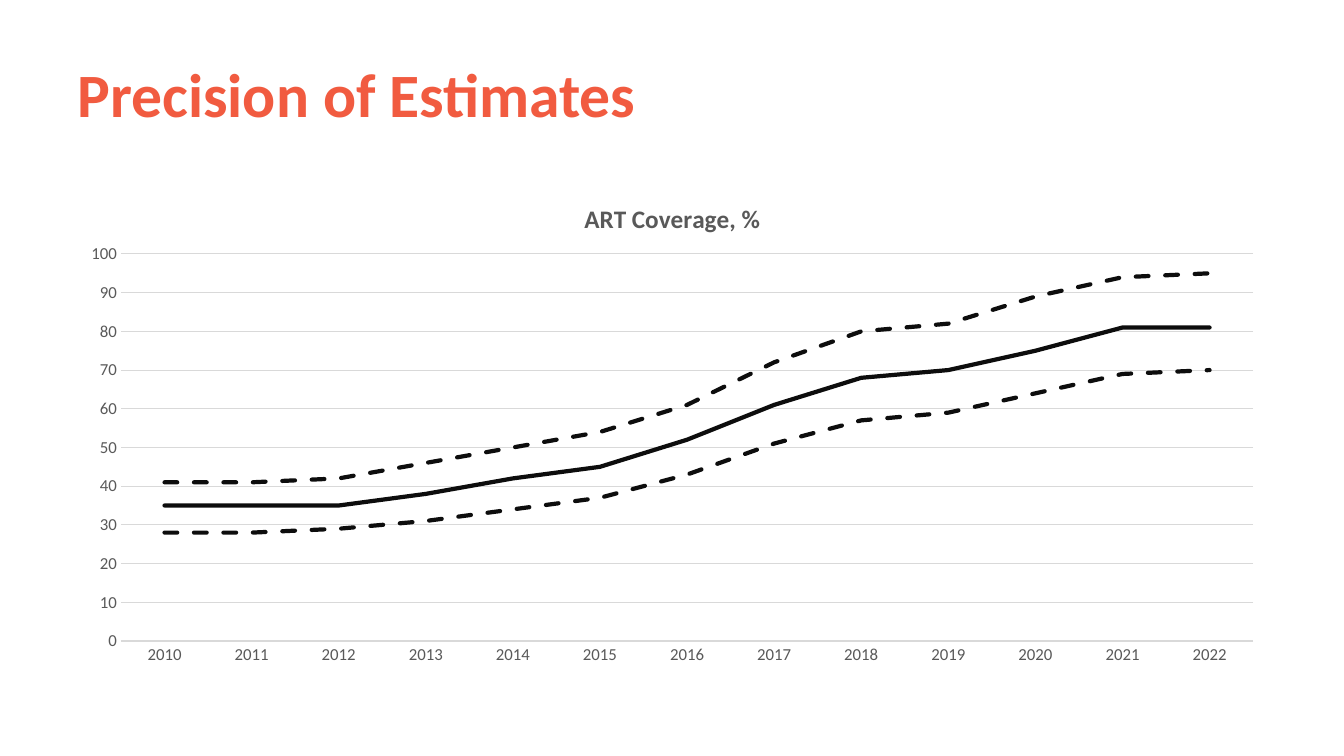
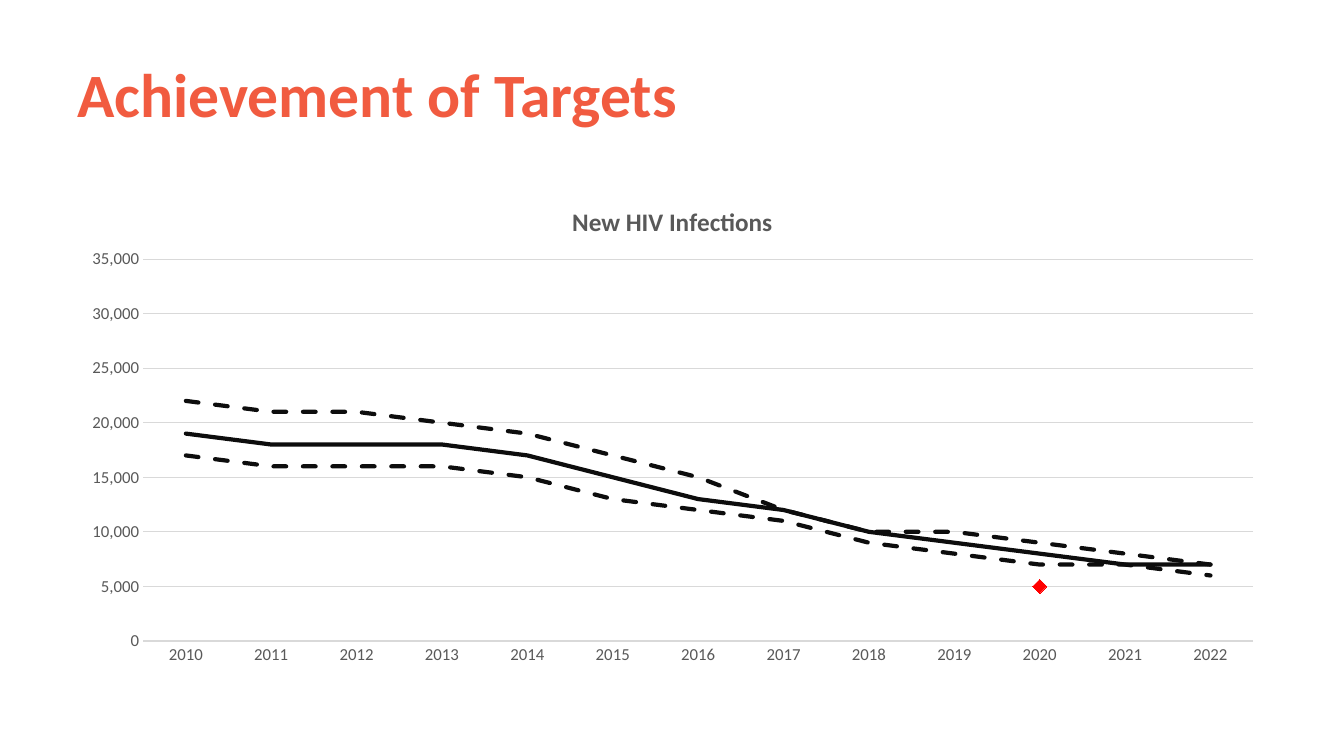
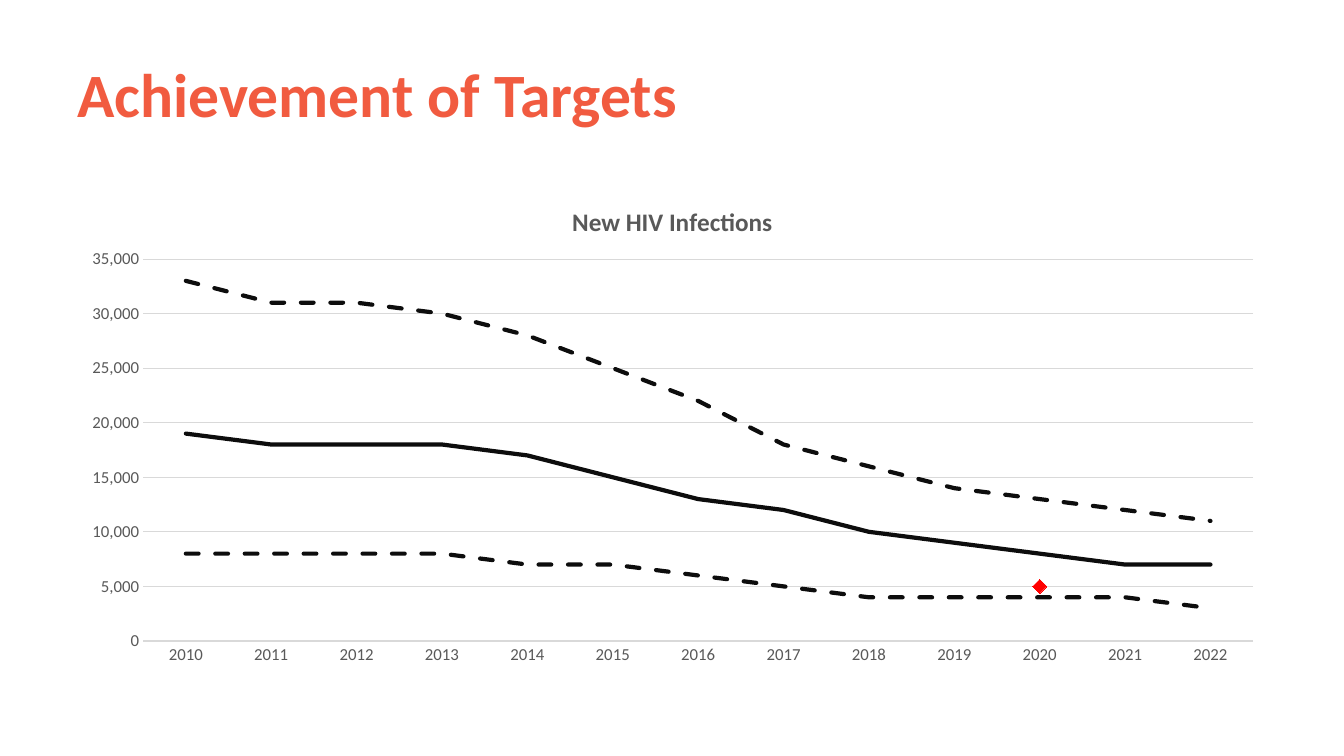
from dataclasses import dataclass

import pptx
import pptx.chart.data
import pptx.dml.color
import pptx.enum.chart
import pptx.enum.dml
import pptx.enum.text
import pptx.oxml
import pptx.oxml.ns
import pptx.util
from pptx.util import Inches


@dataclass
class Theme:
    font: str = "Calibri"
    title_color: str = "F15B40"
    label_color: str = "595959"
    grid_color: str = "D9D9D9"
    line_color: str = "0D0D0D"
    target_color: str = "FF0000"
    text_color: str = "000000"
    title_size: int = 44
    chart_title_size: int = 18
    label_size: int = 12
    chart_size: int = 10
    line_width: float = 3
    grid_width: float = 0.75
    marker_size: int = 10


theme = Theme()

# Shared frame of the chart and right and bottom edges of its plot, in inches
LEFT, TOP, WIDTH, HEIGHT = 0.67, 1.75, 12, 4.95
PLOT_RIGHT, PLOT_BOTTOM = 12.43, 6.36


def style_font(font, size, color, bold=False):
    font.name = theme.font
    font.size = pptx.util.Pt(size)
    font.bold = bold
    font.color.rgb = pptx.dml.color.RGBColor.from_string(color)


def place(parent, index, left, top, right=None, bottom=None):
    """Fix a chart part at slide coordinates given in inches."""
    for old in parent.xpath("c:layout"):
        parent.remove(old)
    settings = [("xMode", "edge"), ("yMode", "edge"),
                ("x", (left - LEFT) / WIDTH), ("y", (top - TOP) / HEIGHT)]
    if right is not None:
        settings.insert(0, ("layoutTarget", "inner"))
        settings += [("w", (right - left) / WIDTH), ("h", (bottom - top) / HEIGHT)]
    tags = "".join(f'<c:{name} val="{value}"/>' for name, value in settings)
    namespace = pptx.oxml.ns.nsdecls("c")
    parent.insert(index, pptx.oxml.parse_xml(
        f"<c:layout {namespace}><c:manualLayout>{tags}</c:manualLayout></c:layout>"))


# Content
years = [str(year) for year in range(2010, 2023)]
infections = [19000, 18000, 18000, 18000, 17000, 15000, 13000,
              12000, 10000, 9000, 8000, 7000, 7000]
target = [5000 if year == "2020" else None for year in years]
infection_chart = dict(title="Achievement of Targets", chart_title="New HIV Infections",
                       title_at=(5.63, 1.98), plot_at=(1.42, 2.57),
                       maximum=35000, step=5000)
slides = [
    dict(title="Precision of Estimates", chart_title="ART Coverage, %",
         title_at=(5.75, 1.95), plot_at=(1.2, 2.52), maximum=100, step=10,
         series=[[35, 35, 35, 38, 42, 45, 52, 61, 68, 70, 75, 81, 81],
                 [28, 28, 29, 31, 34, 37, 43, 51, 57, 59, 64, 69, 70],
                 [41, 41, 42, 46, 50, 54, 61, 72, 80, 82, 89, 94, 95]]),
    dict(infection_chart,
         series=[infections,
                 [17000, 16000, 16000, 16000, 15000, 13000, 12000,
                  11000, 9000, 8000, 7000, 7000, 6000],
                 [22000, 21000, 21000, 20000, 19000, 17000, 15000,
                  12000, 10000, 10000, 9000, 8000, 7000],
                 target]),
    dict(infection_chart,
         series=[infections,
                 [8000, 8000, 8000, 8000, 7000, 7000, 6000,
                  5000, 4000, 4000, 4000, 4000, 3000],
                 [33000, 31000, 31000, 30000, 28000, 25000, 22000,
                  18000, 16000, 14000, 13000, 12000, 11000],
                 target]),
]

deck = pptx.Presentation()
deck.slide_width, deck.slide_height = Inches(13.33), Inches(7.5)

for content in slides:
    page = deck.slides.add_slide(deck.slide_layouts[6])

    # Slide title
    box = page.shapes.add_textbox(Inches(LEFT), Inches(0.3), Inches(WIDTH), Inches(1.25))
    frame = box.text_frame
    frame.word_wrap = True
    frame.vertical_anchor = pptx.enum.text.MSO_ANCHOR.MIDDLE
    frame.text = content["title"]
    style_font(frame.paragraphs[0].runs[0].font, theme.title_size, theme.title_color, True)

    # Chart and its title
    data = pptx.chart.data.CategoryChartData(number_format="#,##0")
    data.categories = years
    for number, values in enumerate(content["series"], 1):
        data.add_series(f"Series {number}", values)
    chart = page.shapes.add_chart(
        pptx.enum.chart.XL_CHART_TYPE.LINE, Inches(LEFT), Inches(TOP),
        Inches(WIDTH), Inches(HEIGHT), data).chart
    style_font(chart.font, theme.chart_size, theme.text_color)
    chart.has_legend = False
    chart.has_title = True
    heading = chart.chart_title.text_frame
    heading.text = content["chart_title"]
    style_font(heading.paragraphs[0].runs[0].font,
               theme.chart_title_size, theme.label_color, True)
    chart.chart_title.include_in_layout = False
    place(chart.element.xpath("c:chart/c:title")[0], 1, *content["title_at"])
    place(chart.element.xpath("c:chart/c:plotArea")[0], 0, *content["plot_at"],
          PLOT_RIGHT, PLOT_BOTTOM)

    # Axes and gridlines
    years_axis, values_axis = chart.category_axis, chart.value_axis
    for axis in (years_axis, values_axis):
        axis.major_tick_mark = axis.minor_tick_mark = pptx.enum.chart.XL_TICK_MARK.NONE
        style_font(axis.tick_labels.font, theme.label_size, theme.label_color)
    values_axis.minimum_scale = 0
    values_axis.maximum_scale = content["maximum"]
    values_axis.major_unit = content["step"]
    values_axis.tick_labels.number_format = "#,##0"
    values_axis.tick_labels.number_format_is_linked = False
    values_axis.format.line.fill.background()
    for line in (years_axis.format.line, values_axis.major_gridlines.format.line):
        line.color.rgb = pptx.dml.color.RGBColor.from_string(theme.grid_color)
        line.width = pptx.util.Pt(theme.grid_width)

    # Estimate, dashed bounds and target marker
    plot = chart.plots[0]
    plot.vary_by_categories = False
    for position, series in enumerate(plot.series):
        series.smooth = False
        line = series.format.line
        if position == 3:
            line.fill.background()
            marker = series.marker
            marker.style = pptx.enum.chart.XL_MARKER_STYLE.DIAMOND
            marker.size = theme.marker_size
            marker.format.fill.solid()
            marker.format.fill.fore_color.rgb = pptx.dml.color.RGBColor.from_string(
                theme.target_color)
            marker.format.line.fill.background()
            continue
        line.color.rgb = pptx.dml.color.RGBColor.from_string(theme.line_color)
        line.width = pptx.util.Pt(theme.line_width)
        if position > 0:
            line.dash_style = pptx.enum.dml.MSO_LINE.DASH
    for outline in chart.element.xpath(".//c:ser/c:spPr/a:ln"):
        outline.set("cap", "rnd")

deck.save("out.pptx")
